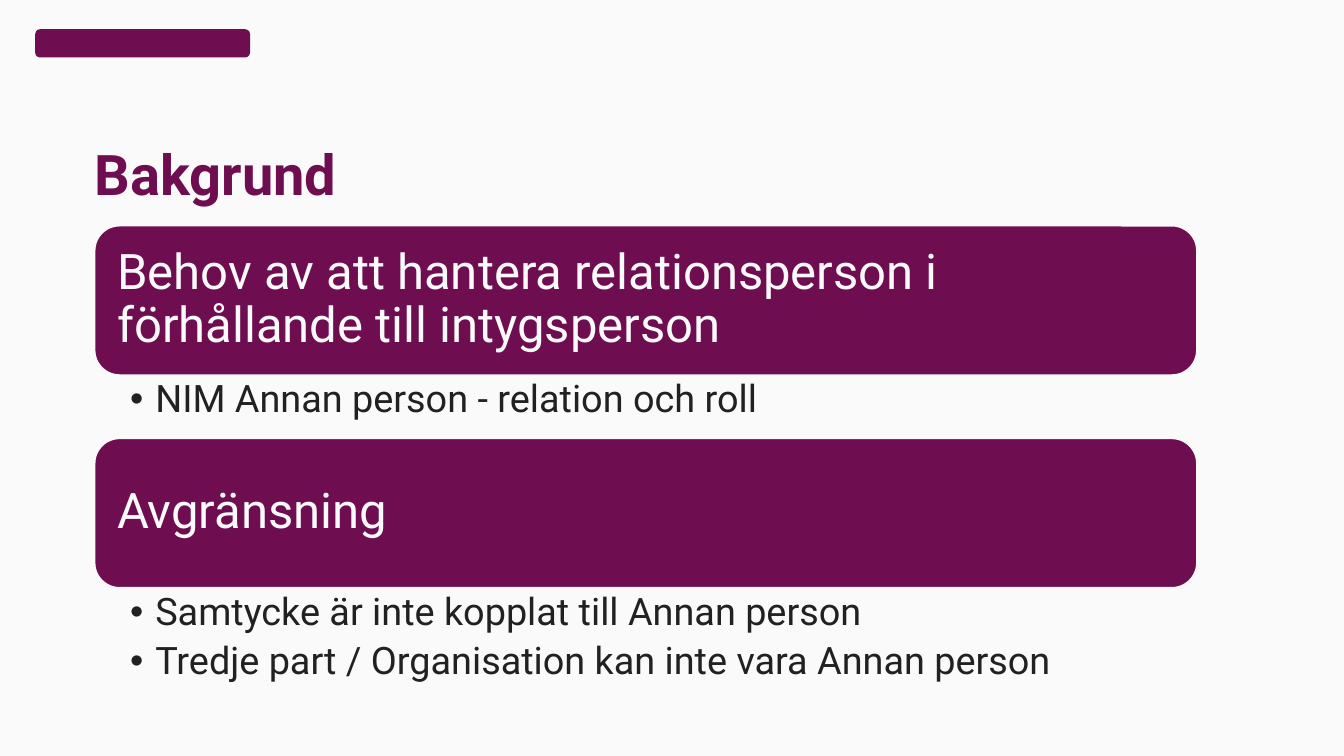
from lxml import etree
from pptx import Presentation
from pptx.dml.color import RGBColor
from pptx.enum.shapes import MSO_SHAPE
from pptx.enum.text import MSO_ANCHOR, MSO_AUTO_SIZE, PP_ALIGN
from pptx.oxml.ns import qn
from pptx.util import Inches, Pt

ROUND = MSO_SHAPE.ROUNDED_RECTANGLE
TOP, MIDDLE, BOTTOM = MSO_ANCHOR.TOP, MSO_ANCHOR.MIDDLE, MSO_ANCHOR.BOTTOM
LEFT = PP_ALIGN.LEFT
NO_FIT = MSO_AUTO_SIZE.NONE

PLUM = RGBColor(0x6E, 0x0E, 0x50)
PALE = RGBColor(0xFA, 0xFA, 0xFA)
INK = RGBColor(0x21, 0x21, 0x21)
FONT = "Roboto"

# One column; each section is a bar with a list below it
EDGE, WIDE = 0.94, 10.93
START, BAR = 2.24, 1.48
SECTIONS = [
    ("Behov av att hantera relationsperson i förhållande till intygsperson",
     ["NIM Annan person - relation och roll"], 0.63),
    ("Avgränsning",
     ["Samtycke är inte kopplat till Annan person",
      "Tredje part / Organisation kan inte vara Annan person"], 0.99),
]


def place(shape, x, y, w, h):
    shape.left, shape.top = Inches(x), Inches(y)
    shape.width, shape.height = Inches(w), Inches(h)


def write(shape, lines, size, color, bold=False, anchor=TOP,
          inset=(0, 0, 0, 0), after=0, bullet=None):
    frame = shape.text_frame
    frame.word_wrap = True
    frame.auto_size = NO_FIT
    frame.vertical_anchor = anchor
    (frame.margin_left, frame.margin_top,
     frame.margin_right, frame.margin_bottom) = map(Inches, inset)
    frame.text = "\n".join(lines)
    for para in frame.paragraphs:
        para.alignment = LEFT
        para.line_spacing = 0.9
        para.space_before, para.space_after = Pt(0), Pt(after)
        font = para.runs[0].font
        font.name, font.size, font.bold = FONT, Pt(size), bold
        font.color.rgb = color
        if bullet:
            props = para._p.get_or_add_pPr()
            props.set("marL", str(Inches(0.25)))
            props.set("indent", str(-Inches(0.25)))
            etree.SubElement(props, qn("a:buChar")).set("char", bullet)


def block(slide, x, y, w, h, line=None):
    shape = slide.shapes.add_shape(
        ROUND, Inches(x), Inches(y), Inches(w), Inches(h))
    shape.shadow.inherit = False
    shape.fill.solid()
    shape.fill.fore_color.rgb = PLUM
    if line:
        shape.line.color.rgb = line
        shape.line.width = Pt(1)
    else:
        shape.line.fill.background()
    return shape


def section(slide, holder, y, head, items, depth):
    bar = block(slide, EDGE, y, WIDE, BAR, line=PALE)
    write(bar, [head], 35, PALE, anchor=MIDDLE, inset=(0.15,) * 4)
    place(holder, EDGE, y + BAR, WIDE, depth)
    write(holder, items, 27, INK, inset=(0.35, 0.05, 0.27, 0.05),
          after=6, bullet="•")


def main():
    deck = Presentation()
    deck.slide_width, deck.slide_height = Inches(13.33), Inches(7.5)
    slide = deck.slides.add_slide(deck.slide_layouts.get_by_name("Two Content"))
    slide.background.fill.solid()
    slide.background.fill.fore_color.rgb = PALE

    # Plain mark in the top corner
    block(slide, 0.35, 0.29, 2.13, 0.28)

    # Title
    title, *lists = slide.placeholders
    place(title, EDGE, 1.45, 7, 0.61)
    write(title, ["Bakgrund"], 40, PLUM, bold=True, anchor=BOTTOM)

    # Sections, stacked without gaps
    y = START
    for holder, (head, items, depth) in zip(lists, SECTIONS):
        section(slide, holder, y, head, items, depth)
        y += BAR + depth

    deck.save("out.pptx")


if __name__ == "__main__":
    main()
